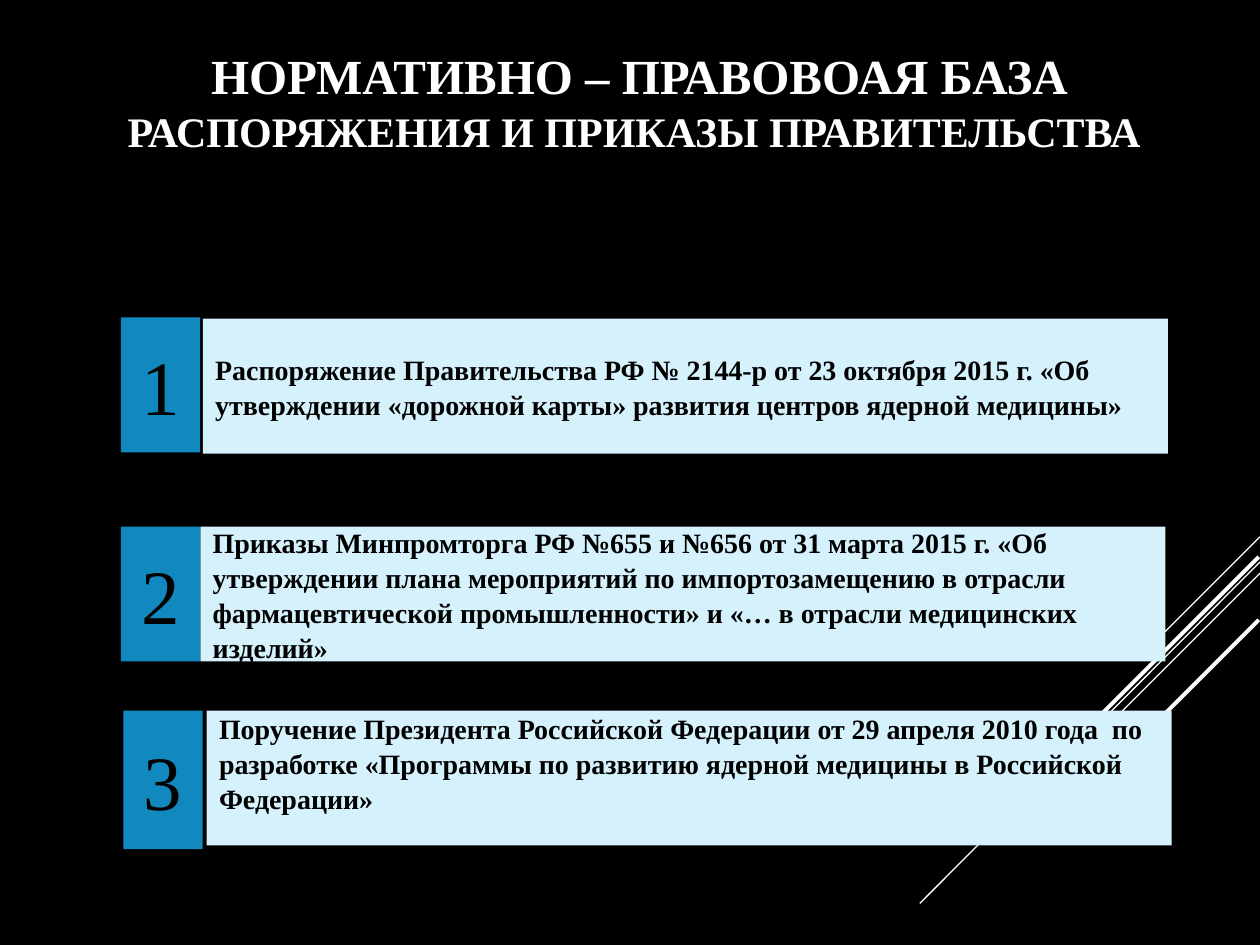
from pptx import Presentation
from pptx.dml.color import RGBColor
from pptx.enum.shapes import MSO_CONNECTOR as Conn, MSO_SHAPE as Kind
from pptx.enum.text import MSO_ANCHOR as Anchor, PP_ALIGN as Align
from pptx.oxml.ns import qn
from pptx.util import Inches, Pt
from lxml import etree

BLACK = RGBColor(0x00, 0x00, 0x00)
WHITE = RGBColor(0xFF, 0xFF, 0xFF)
BLUE = RGBColor(0x11, 0x89, 0xBE)
PALE = RGBColor(0xD5, 0xF1, 0xFB)
FACE = "Times New Roman"


def write(para, text, align, **style):
    para.alignment = align
    run = para.add_run()
    run.text = text
    color = style.pop("color")
    for name, value in style.items():
        setattr(run.font, name, value)
    run.font.name = FACE
    run.font.color.rgb = color


def add_box(left, top, width, height, fill):
    box = slide.shapes.add_shape(
        Kind.RECTANGLE, Inches(left), Inches(top), Inches(width), Inches(height))
    box.shadow.inherit = False
    box.fill.solid()
    box.fill.fore_color.rgb = fill
    box.line.fill.background()
    frame = box.text_frame
    frame.word_wrap = True
    frame.vertical_anchor = Anchor.MIDDLE
    return frame


prs = Presentation()
prs.slide_width, prs.slide_height = Inches(10), Inches(7.5)
slide = prs.slides.add_slide(prs.slide_layouts[5])
slide.background.fill.solid()
slide.background.fill.fore_color.rgb = BLACK

# Diagonal rays in the lower right corner
rays = [
    (10, 4.26, 9.17, 5.09, 0.75),
    (10, 4.46, 7.3, 7.17, 0.75),
    (10, 4.55, 8.28, 6.27, 0.75),
    (9.99, 4.42, 8.42, 5.99, 2.25),
    (9.99, 4.92, 8.85, 6.06, 2.25),
]
for *ends, weight in rays:
    ray = slide.shapes.add_connector(Conn.STRAIGHT, *map(Inches, ends))
    ray.line.color.rgb = WHITE
    ray.line.width = Pt(weight)
    etree.SubElement(ray._element.spPr, qn("a:effectLst"))

# Title in two sizes
title = slide.shapes.title
place = {"left": 0.35, "top": 0.13, "width": 9.45, "height": 1.32}
for name, value in place.items():
    setattr(title, name, Inches(value))
head = title.text_frame
head.word_wrap = True
head.vertical_anchor = Anchor.MIDDLE
write(head.paragraphs[0], "НОРМАТИВНО – ПРАВОВОАЯ БАЗА", Align.CENTER,
      size=Pt(28), bold=True, color=WHITE)
write(head.add_paragraph(), "РАСПОРЯЖЕНИЯ И ПРИКАЗЫ ПРАВИТЕЛЬСТВА ", Align.CENTER,
      size=Pt(24), bold=True, color=WHITE)
for para in head.paragraphs:
    para.space_before = Pt(0)
    para.line_spacing = 1.04

# Numbered acts: number left, top, height; text left, top, anchor; wording
acts = [
    (0.96, 2.52, 1.07, 1.61, 2.53, Anchor.MIDDLE,
     "Распоряжение Правительства РФ № 2144-р от 23 октября 2015 г. «Об "
     "утверждении «дорожной карты» развития центров ядерной медицины»"),
    (0.96, 4.18, 1.07, 1.59, 4.18, Anchor.MIDDLE,
     "Приказы Минпромторга РФ №655 и №656 от 31 марта 2015 г. «Об "
     "утверждении плана мероприятий по импортозамещению в отрасли "
     "фармацевтической промышленности» и «… в отрасли медицинских изделий»"),
    (0.98, 5.64, 1.1, 1.64, 5.64, Anchor.TOP,
     "Поручение Президента Российской Федерации от 29 апреля 2010 года  по "
     "разработке «Программы по развитию ядерной медицины в Российской Федерации»"),
]
for num, (left, top, height, start, level, anchor, text) in enumerate(acts, 1):
    body = add_box(start, level, 7.66, 1.07, PALE)
    body.vertical_anchor = anchor
    body.margin_top = body.margin_bottom = 0
    body.paragraphs[0].line_spacing = 1.04
    write(body.paragraphs[0], text, Align.LEFT, size=Pt(16), bold=True, color=BLACK)
    mark = add_box(left, top, 0.63, height, BLUE)
    write(mark.paragraphs[0], str(num), Align.CENTER, size=Pt(44), color=BLACK)

prs.save("out.pptx")
